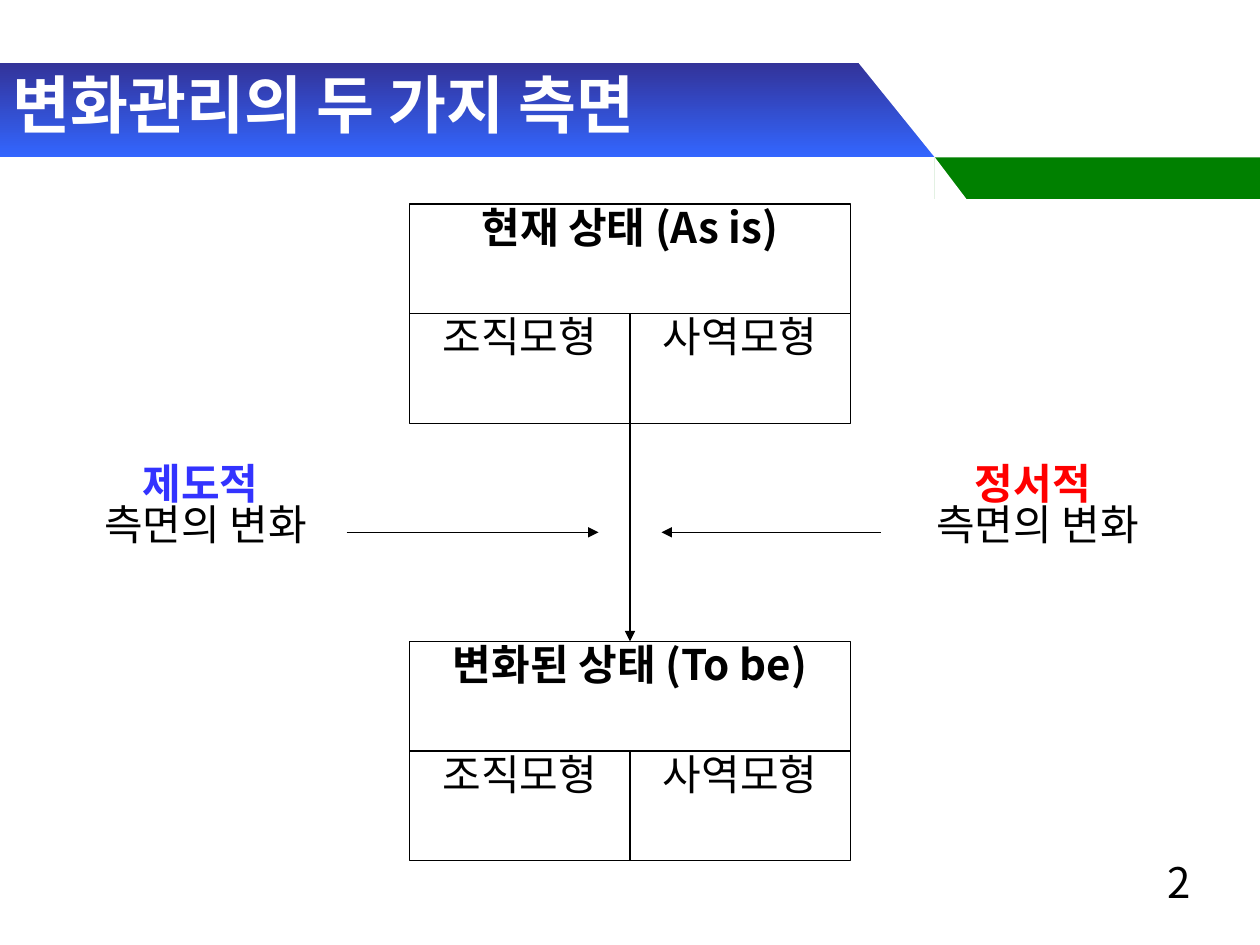
from dataclasses import dataclass

from lxml import etree
from pptx import Presentation
from pptx import util as u
from pptx.dml.color import RGBColor
from pptx.enum import shapes, text
from pptx.oxml.ns import qn


@dataclass(frozen=True)
class Theme:
    font: str = "Noto Sans CJK KR"
    title_size: int = 36
    body_size: int = 24
    line_spacing: float = 0.82
    line_width: float = 0.75
    white: str = "FFFFFF"
    black: str = "000000"
    navy: str = "333399"
    sky: str = "3366FF"
    green: str = "008000"
    blue: str = "3333FF"
    red: str = "FF0000"


THEME = Theme()
RECT = shapes.MSO_SHAPE.RECTANGLE
TRIANGLE = shapes.MSO_SHAPE.RIGHT_TRIANGLE
CENTER = text.PP_ALIGN.CENTER
LEFT = text.PP_ALIGN.LEFT
TOP, BOTTOM_SIDE, LEFT_SIDE, RIGHT_SIDE = 0, 2, 1, 3
CENTER_X = 5
CELL_W, CELL_H = 1.75, 0.87


def rgb(value):
    return RGBColor.from_string(value)


def inches(*values):
    return [u.Inches(v) for v in values]


def write(sp, lines, size=THEME.body_size, align=CENTER, anchor=text.MSO_ANCHOR.TOP):
    """Fill a shape with one paragraph per (wording, colour, bold) line."""
    tf = sp.text_frame
    tf.word_wrap = True
    tf.vertical_anchor = anchor
    for i, (wording, color, bold) in enumerate(lines):
        p = tf.add_paragraph() if i else tf.paragraphs[0]
        p.text = wording
        p.alignment = align
        p.line_spacing = THEME.line_spacing
        p.font.name = THEME.font
        p.font.size = u.Pt(size)
        p.font.bold = bold
        p.font.color.rgb = rgb(color)
        # Hangul takes its typeface from the East Asian font slot.
        for r in p.runs:
            ea = etree.SubElement(r._r.get_or_add_rPr(), qn("a:ea"))
            ea.set("typeface", THEME.font)


def add_block(s, kind, box, fill, outlined=False):
    sp = s.shapes.add_shape(kind, *inches(*box))
    sp.shadow.inherit = False
    sp.fill.solid()
    sp.fill.fore_color.rgb = rgb(fill)
    if outlined:
        sp.line.color.rgb = rgb(THEME.black)
        sp.line.width = u.Pt(THEME.line_width)
    else:
        sp.line.fill.background()
    return sp


def add_text(s, box, lines, **style):
    sp = s.shapes.add_textbox(*inches(*box))
    write(sp, lines, **style)
    return sp


def add_arrow(s, start, end):
    line = s.shapes.add_connector(shapes.MSO_CONNECTOR.STRAIGHT, *inches(*start, *end))
    line.line.color.rgb = rgb(THEME.black)
    line.line.width = u.Pt(THEME.line_width)
    etree.SubElement(line.line._get_or_add_ln(), qn("a:tailEnd")).set("type", "triangle")
    etree.SubElement(line._element.spPr, qn("a:effectLst"))
    return line


def add_banner(s):
    band = add_block(s, RECT, (0, 0.5, 7.42, 0.75), THEME.navy)
    band.fill.gradient()
    band.fill.gradient_angle = 270
    for stop, color, position in zip(band.fill.gradient_stops, (THEME.navy, THEME.sky), (0, 1)):
        stop.color.rgb = rgb(color)
        stop.position = position
    add_block(s, RECT, (7.42, 1.25, 2.58, 0.33), THEME.green)
    add_block(s, TRIANGLE, (6.75, 0.42, 0.67, 0.83), THEME.white).rotation = 180
    add_block(s, TRIANGLE, (7.42, 1.25, 0.25, 0.33), THEME.white)


def add_state(s, top, heading):
    """Draw a heading over its two model cells and return the heading."""
    left = CENTER_X - CELL_W
    head = add_block(s, RECT, (left, top, 2 * CELL_W, CELL_H), THEME.white, outlined=True)
    write(head, [(heading, THEME.black, True)])
    for i, model in enumerate(("조직모형", "사역모형")):
        box = (left + i * CELL_W, top + CELL_H, CELL_W, CELL_H)
        cell = add_block(s, RECT, box, THEME.white, outlined=True)
        write(cell, [(model, THEME.black, False)])
    return head


def add_aspect(s, box, word, color, side, start_x, end_x):
    """Label one aspect of change, with an arrow towards the centre."""
    label = add_text(s, box, [(word, color, True), ("측면의 변화", THEME.black, False)])
    y = box[1] + box[3] / 2
    add_arrow(s, (start_x, y), (end_x, y)).begin_connect(label, side)


def main():
    prs = Presentation()
    prs.slide_width, prs.slide_height = inches(10, 7.5)
    s = prs.slides.add_slide(prs.slide_layouts[6])

    add_banner(s)
    as_is_top, to_be_top = 1.62, 5.09
    add_state(s, as_is_top, "현재 상태 (As is)")
    to_be = add_state(s, to_be_top, "변화된 상태 (To be)")
    change = add_arrow(s, (CENTER_X, as_is_top + 2 * CELL_H), (CENTER_X, to_be_top))
    change.end_connect(to_be, TOP)

    add_aspect(s, (0.51, 3.65, 2.24, 1.15), "제도적 ", THEME.blue, RIGHT_SIDE, 2.75, 4.75)
    add_aspect(s, (6.99, 3.65, 2.49, 1.15), "정서적 ", THEME.red, LEFT_SIDE, 6.99, 5.25)

    add_text(s, (0, 0.52, 7.36, 0.71), [("변화관리의 두 가지 측면", THEME.white, True)],
             size=THEME.title_size, align=LEFT, anchor=text.MSO_ANCHOR.MIDDLE)
    add_text(s, (9.17, 6.82, 0.55, 0.5), [("2", THEME.black, False)], align=LEFT)
    prs.save("out.pptx")


if __name__ == "__main__":
    main()
